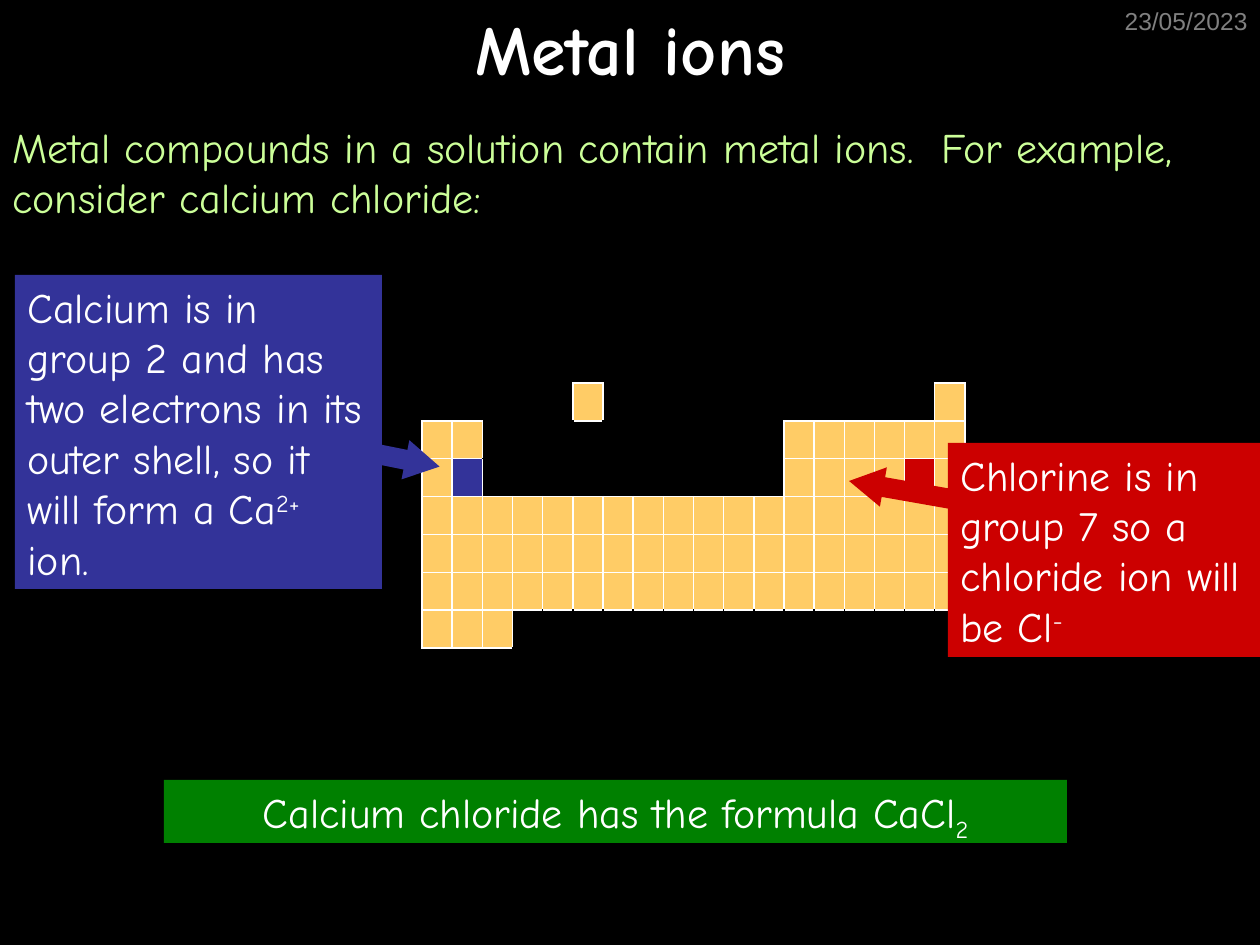
from dataclasses import dataclass
from typing import NamedTuple

from lxml.etree import SubElement
from pptx import Presentation
from pptx.dml.color import RGBColor
from pptx.enum.shapes import MSO_SHAPE
from pptx.enum.text import MSO_ANCHOR, MSO_AUTO_SIZE, PP_ALIGN
from pptx.oxml.ns import qn
from pptx.util import Emu, Pt


@dataclass(frozen=True)
class Theme:
    black: str = "000000"
    white: str = "FFFFFF"
    grey: str = "808080"
    lime: str = "CCFF99"
    gold: str = "FFCC66"
    blue: str = "333399"
    red: str = "CC0000"
    green: str = "008000"
    font: str = "Comic Neue"
    plain: str = "Arial"
    head: int = 40
    body: int = 24
    small: int = 14
    cell: int = 8


class Box(NamedTuple):
    left: int
    top: int
    width: int
    height: int


class Piece(NamedTuple):
    text: str
    shift: int = 0  # percent above or below the line


class Note(NamedTuple):
    box: Box
    fill: str
    words: list[Piece]
    align: PP_ALIGN = PP_ALIGN.LEFT


class Arrow(NamedTuple):
    box: Box
    turn: float


THEME = Theme()
LEFT, RIGHT, MID = PP_ALIGN.LEFT, PP_ALIGN.RIGHT, PP_ALIGN.CENTER

# Each letter is one cell: G an element, C calcium, L chlorine
GRID = [
    ".....G...........G",
    "GG..........GGGGGG",
    "GC..........GGGGLG",
    *["G" * 18] * 3,
    "GGG" + "." * 15,
]
FILLS = {".": THEME.black, "G": THEME.gold, "C": THEME.blue, "L": THEME.red}
SIDES = {"a:lnL": (0, -1), "a:lnR": (0, 1), "a:lnT": (-1, 0), "a:lnB": (1, 0)}

CALLS = [
    (Arrow(Box(848, 473, 139, 40), 190),
     Note(Box(948, 443, 312, 214), THEME.red,
          [Piece("Chlorine is in group 7 so a chloride ion will be Cl"), Piece("-", 30)])),
    (Arrow(Box(302, 433, 139, 40), 11.3),
     Note(Box(15, 275, 367, 314), THEME.blue,
          [Piece("Calcium is in group 2 and has two electrons in its outer shell, "
                 "so it will form a Ca"), Piece("2+", 30), Piece(" ion.")])),
]
RESULT = Note(Box(164, 780, 903, 63), THEME.green,
              [Piece("Calcium chloride has the formula CaCl"), Piece("2", -25)], MID)


def px(count: float) -> Emu:
    return Emu(round(count * 914400 / 126))


def place(box: Box) -> list[Emu]:
    return [px(side) for side in box]


def assign(target, values: dict) -> None:
    for name, value in values.items():
        setattr(target, name, value)


def write(frame, words: list[Piece], tint: str = THEME.white, align: PP_ALIGN = LEFT,
          size: int = THEME.body, face: str = THEME.font, bold: bool = False) -> None:
    assign(frame, {"word_wrap": True, "vertical_anchor": MSO_ANCHOR.TOP})
    line = frame.paragraphs[0]
    line.alignment = align
    for piece in words:
        run = line.add_run()
        run.text = piece.text
        assign(run.font, {"name": face, "size": Pt(size), "bold": bold})
        run.font.color.rgb = RGBColor.from_string(tint)
        if piece.shift:
            run._r.get_or_add_rPr().set("baseline", str(piece.shift * 1000))


def add_block(shapes, kind: MSO_SHAPE, box: Box, fill: str):
    block = shapes.add_shape(kind, *place(box))
    block.shadow.inherit = False
    block.fill.solid()
    block.fill.fore_color.rgb = RGBColor.from_string(fill)
    block.line.fill.background()
    return block


def add_note(shapes, note: Note) -> None:
    block = add_block(shapes, MSO_SHAPE.RECTANGLE, note.box, note.fill)
    write(block.text_frame, note.words, align=note.align)
    block.text_frame.auto_size = MSO_AUTO_SIZE.SHAPE_TO_FIT_TEXT


def add_arrow(shapes, arrow: Arrow, fill: str) -> None:
    block = add_block(shapes, MSO_SHAPE.RIGHT_ARROW, arrow.box, fill)
    block.rotation = arrow.turn
    block.adjustments[1] = 0.87


def add_text(shapes, box: Box, text: str, **style) -> None:
    write(shapes.add_textbox(*place(box)).text_frame, [Piece(text)], **style)


def is_full(row: int, col: int) -> bool:
    return 0 <= row < len(GRID) and 0 <= col < len(GRID[0]) and GRID[row][col] != "."


def add_edge(cell, tag: str, tint: str) -> None:
    edge = SubElement(cell._tc.get_or_add_tcPr(), qn(tag), w=str(Pt(1)))
    fill = SubElement(edge, qn("a:solidFill"))
    SubElement(fill, qn("a:srgbClr"), val=tint)


def add_grid(shapes, box: Box) -> None:
    rows, cols = len(GRID), len(GRID[0])
    table = shapes.add_table(rows, cols, *place(box)).table
    assign(table, {"first_row": False, "horz_banding": False})
    for row in table.rows:
        row.height = px(box.height / rows)
    for col in table.columns:
        col.width = px(box.width / cols)
    for r, marks in enumerate(GRID):
        for c, mark in enumerate(marks):
            cell = table.cell(r, c)
            assign(cell, dict.fromkeys(
                ("margin_left", "margin_right", "margin_top", "margin_bottom"), 0))
            # An edge is white wherever it touches an element
            for tag, (down, over) in SIDES.items():
                lit = is_full(r, c) or is_full(r + down, c + over)
                add_edge(cell, tag, THEME.white if lit else THEME.black)
            cell.fill.solid()
            cell.fill.fore_color.rgb = RGBColor.from_string(FILLS[mark])
            # Small type keeps the empty rows low
            line = cell.text_frame.paragraphs[0]
            SubElement(line._p, qn("a:endParaRPr"), sz=str(THEME.cell * 100))


def main() -> None:
    deck = Presentation()
    assign(deck, {"slide_width": px(1260), "slide_height": px(945)})
    slide = deck.slides.add_slide(deck.slide_layouts[5])
    slide.background.fill.solid()
    slide.background.fill.fore_color.rgb = RGBColor.from_string(THEME.black)
    shapes = slide.shapes

    # Date, title and opening line
    add_text(shapes, Box(966, 0, 294, 66), "23/05/2023", tint=THEME.grey,
             align=RIGHT, size=THEME.small, face=THEME.plain)
    title = shapes.title
    assign(title, dict(zip(("left", "top", "width", "height"),
                           place(Box(0, 0, 1260, 96)))))
    write(title.text_frame, [Piece("Metal ions")], align=MID, size=THEME.head, bold=True)
    assign(title.text_frame, {"vertical_anchor": MSO_ANCHOR.MIDDLE,
                              "auto_size": MSO_AUTO_SIZE.NONE})
    add_text(shapes, Box(0, 115, 1260, 113),
             "Metal compounds in a solution contain metal ions.  For example, "
             "consider calcium chloride:", tint=THEME.lime)

    # Periodic table
    add_grid(shapes, Box(422, 383, 543, 265))

    # Callouts, each with its arrow
    for arrow, note in CALLS:
        group = shapes.add_group_shape()
        add_arrow(group.shapes, arrow, note.fill)
        add_note(group.shapes, note)

    # Formula
    add_note(shapes, RESULT)
    deck.save("out.pptx")


if __name__ == "__main__":
    main()
